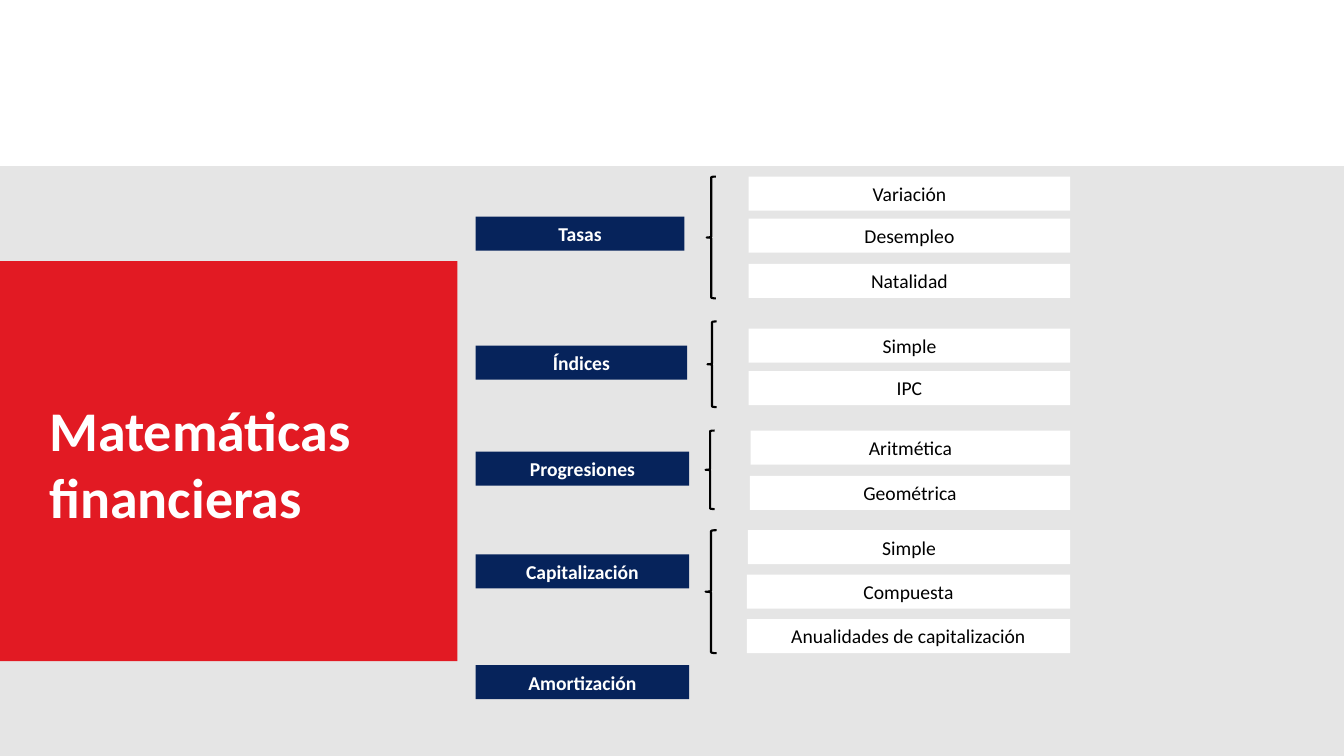
import dataclasses

import pptx
import pptx.dml.color
import pptx.enum.shapes
import pptx.enum.text
import pptx.shapes.autoshape
import pptx.slide
import pptx.text.text
import pptx.util
from pptx.util import Cm

SHAPE = pptx.enum.shapes.MSO_SHAPE
ALIGN = pptx.enum.text.PP_ALIGN
AUTO_SIZE = pptx.enum.text.MSO_AUTO_SIZE


@dataclasses.dataclass(frozen=True)
class Theme:
    font: str = "Calibri"
    title_size: int = 40
    label_size: int = 14
    grey: str = "E5E5E5"
    red: str = "E21A23"
    navy: str = "06235B"
    white: str = "FFFFFF"
    black: str = "000000"
    brace_width: float = 1.5


@dataclasses.dataclass(frozen=True)
class Box:
    """Position and size in centimetres."""
    left: float
    top: float
    width: float
    height: float


@dataclasses.dataclass(frozen=True)
class Item:
    text: str
    left: float
    top: float


@dataclasses.dataclass(frozen=True)
class Branch:
    topic: str
    top: float
    width: float
    brace: Box | None = None
    items: tuple[Item, ...] = ()


THEME = Theme()
SLIDE_WIDTH, SLIDE_HEIGHT = 33.87, 19.05
LABEL_HEIGHT = 0.86
TOPIC_LEFT = 11.99
ITEM_RIGHT = 26.97
GREY_BAND = Box(0, 4.19, SLIDE_WIDTH, 14.86)
RED_PANEL = Box(0, 6.58, 11.53, 10.08)
TITLE = Box(0.99, 9.83, 9.75, 3.68)

BRANCHES = (
    Branch("Tasas", 5.46, 5.26, Box(17.81, 4.45, 0.23, 3.07), (
        Item("Variación", 18.87, 4.45),
        Item("Desempleo", 18.87, 5.51),
        Item("Natalidad", 18.87, 6.65),
    )),
    Branch("Índices", 8.71, 5.33, Box(17.83, 8.1, 0.23, 2.16), (
        Item("Simple", 18.87, 8.28),
        Item("IPC", 18.87, 9.35),
    )),
    Branch("Progresiones", 11.38, 5.38, Box(17.78, 10.85, 0.23, 1.98), (
        Item("Aritmética", 18.92, 10.85),
        Item("Geométrica", 18.9, 11.99),
    )),
    Branch("Capitalización", 13.97, 5.38, Box(17.78, 13.36, 0.28, 3.1), (
        Item("Simple", 18.85, 13.36),
        Item("Compuesta", 18.82, 14.48),
        Item("Anualidades de capitalización", 18.82, 15.6),
    )),
    Branch("Amortización", 16.76, 5.38),
)


def rgb(colour: str) -> pptx.dml.color.RGBColor:
    return pptx.dml.color.RGBColor.from_string(colour)


def set_text(tf: pptx.text.text.TextFrame, text: str, size: int,
             colour: str, bold: bool, align: ALIGN) -> None:
    tf.text = text
    tf.word_wrap = True
    p = tf.paragraphs[0]
    p.alignment = align
    p.line_spacing = 1.0
    font = p.runs[0].font
    font.name = THEME.font
    font.size = pptx.util.Pt(size)
    font.bold = bold
    font.color.rgb = rgb(colour)


def add_rect(s: pptx.slide.Slide, box: Box,
             fill: str) -> pptx.shapes.autoshape.Shape:
    sp = s.shapes.add_shape(SHAPE.RECTANGLE, Cm(box.left), Cm(box.top),
                            Cm(box.width), Cm(box.height))
    sp.shadow.inherit = False
    sp.fill.solid()
    sp.fill.fore_color.rgb = rgb(fill)
    sp.line.fill.background()
    return sp


def add_label(s: pptx.slide.Slide, text: str, box: Box, fill: str,
              colour: str, bold: bool) -> None:
    tf = add_rect(s, box, fill).text_frame
    set_text(tf, text, THEME.label_size, colour, bold, ALIGN.CENTER)
    tf.auto_size = AUTO_SIZE.SHAPE_TO_FIT_TEXT


def add_brace(s: pptx.slide.Slide, box: Box) -> None:
    sp = s.shapes.add_shape(SHAPE.LEFT_BRACE, Cm(box.left), Cm(box.top),
                            Cm(box.width), Cm(box.height))
    sp.shadow.inherit = False
    sp.fill.background()
    sp.line.color.rgb = rgb(THEME.black)
    sp.line.width = pptx.util.Pt(THEME.brace_width)


def place_title(s: pptx.slide.Slide, text: str) -> None:
    """Fill the title placeholder and bring it in front of the panels."""
    title = s.shapes.title
    title.left, title.top = Cm(TITLE.left), Cm(TITLE.top)
    title.width, title.height = Cm(TITLE.width), Cm(TITLE.height)
    tf = title.text_frame
    set_text(tf, text, THEME.title_size, THEME.white, True, ALIGN.LEFT)
    tf.vertical_anchor = pptx.enum.text.MSO_ANCHOR.TOP
    tf.auto_size = AUTO_SIZE.SHAPE_TO_FIT_TEXT
    s.shapes.element.append(title.element)


def add_branch(s: pptx.slide.Slide, branch: Branch) -> None:
    topic_box = Box(TOPIC_LEFT, branch.top, branch.width, LABEL_HEIGHT)
    add_label(s, branch.topic, topic_box, THEME.navy, THEME.white, True)
    if branch.brace:
        add_brace(s, branch.brace)
    for item in branch.items:
        box = Box(item.left, item.top, ITEM_RIGHT - item.left, LABEL_HEIGHT)
        add_label(s, item.text, box, THEME.white, THEME.black, False)


def main() -> None:
    prs = pptx.Presentation()
    prs.slide_width, prs.slide_height = Cm(SLIDE_WIDTH), Cm(SLIDE_HEIGHT)
    s = prs.slides.add_slide(prs.slide_layouts.get_by_name("Title Only"))
    add_rect(s, GREY_BAND, THEME.grey)
    add_rect(s, RED_PANEL, THEME.red)
    place_title(s, "Matemáticas financieras")
    for branch in BRANCHES:
        add_branch(s, branch)
    prs.save("out.pptx")


if __name__ == "__main__":
    main()
